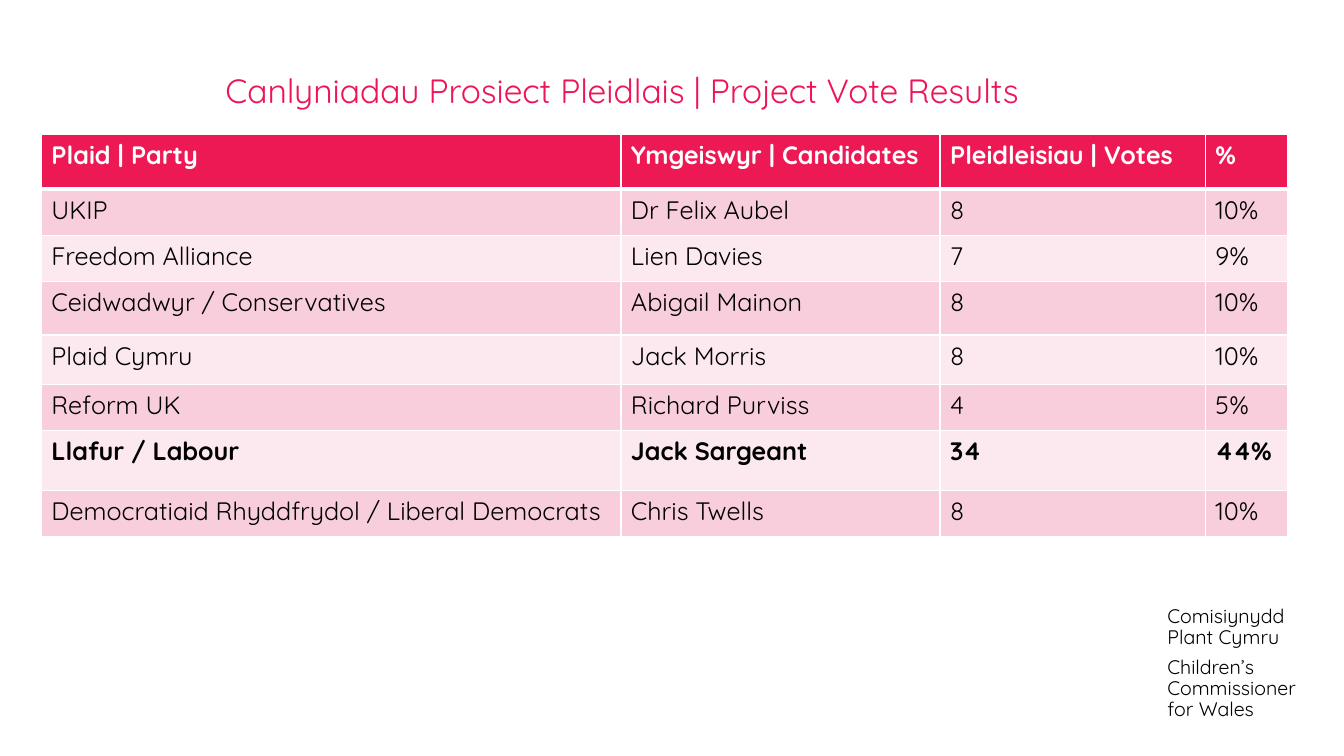
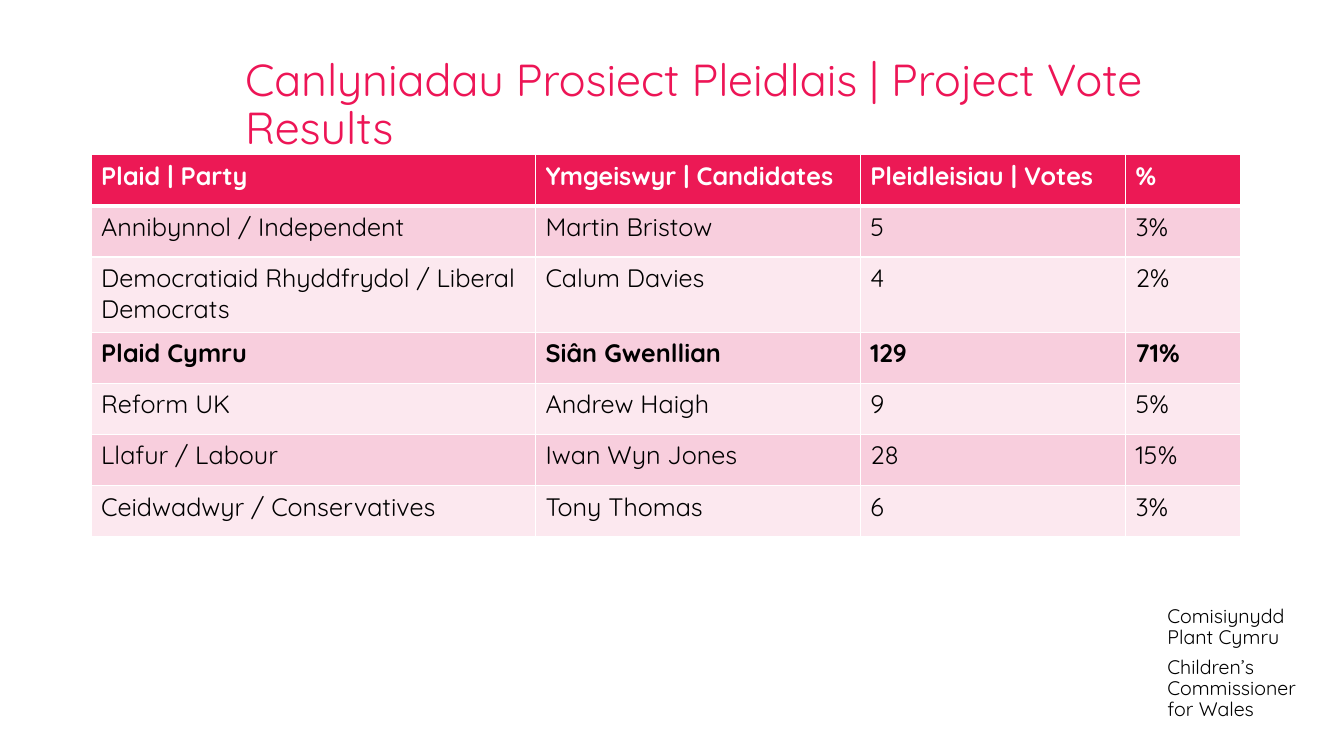
import copy

import pptx
import pptx.dml.color
import pptx.enum.text
import pptx.oxml
import pptx.oxml.ns
import pptx.util
from lxml import etree

Pt = pptx.util.Pt
FONT = "Quicksand"
PINK = "ED1556"
HEADER_FILL = "EC1955"
BAND_FILLS = ("F8CEDD", "FCE8EF")
WHITE = "FFFFFF"
BLACK = "000000"
TITLE = "Canlyniadau Prosiect Pleidlais | Project Vote Results"
HEADINGS = ("Plaid | Party", "Ymgeiswyr | Candidates", "Pleidleisiau | Votes", "%")
OFFICE_NAMES = ("Comisiynydd\vPlant Cymru", "Children’s\vCommissioner\vfor Wales")

RESULTS = [
    {
        "title": {"left": 161, "top": 53.3, "size": 24},
        "table": {"left": 29.5, "top": 96},
        "widths": (414, 228, 189.5, 59),
        "heights": (38.9, 33.1, 33.1, 38.2, 35.3, 33.1, 42.5, 33.1),
        "winner": "Llafur / Labour",
        "rows": [
            ("UKIP", "Dr Felix Aubel", "8", "10%"),
            ("Freedom Alliance", "Lien Davies", "7", "9%"),
            ("Ceidwadwyr / Conservatives", "Abigail Mainon", "8", "10%"),
            ("Plaid Cymru", "Jack Morris", "8", "10%"),
            ("Reform UK", "Richard Purviss", "4", "5%"),
            ("Llafur / Labour", "Jack Sargeant", "34", "44%"),
            ("Democratiaid Rhyddfrydol / Liberal Democrats", "Chris Twells", "8", "10%"),
        ],
    },
    {
        "title": {"left": 175, "top": 41, "size": 32},
        "table": {"left": 65, "top": 110.6},
        "widths": (317.5, 232, 189.5, 82.5),
        "heights": (36.5, 36.5, 54, 36.5, 36.5, 36.5, 36.5),
        "winner": "Plaid Cymru",
        "rows": [
            ("Annibynnol / Independent", "Martin Bristow", "5", "3%"),
            ("Democratiaid Rhyddfrydol / Liberal Democrats", "Calum Davies", "4", "2%"),
            ("Plaid Cymru", "Siân Gwenllian", "129", "71%"),
            ("Reform UK", "Andrew Haigh", "9", "5%"),
            ("Llafur / Labour", "Iwan Wyn Jones", "28", "15%"),
            ("Ceidwadwyr / Conservatives", "Tony Thomas", "6", "3%"),
        ],
    },
]


def rgb(value):
    return pptx.dml.color.RGBColor.from_string(value)


def set_all(target, values):
    for name, value in values.items():
        setattr(target, name, value)


def write(para, text, size, color, bold=False, **layout):
    para.text = text
    set_all(para, layout)
    for span in para.runs:
        set_all(span.font, {"name": FONT, "size": Pt(size), "bold": bold})
        span.font.color.rgb = rgb(color)
    properties = para.runs[0].font._element
    for line_break in para._p.findall(pptx.oxml.ns.qn("a:br")):
        line_break.append(copy.deepcopy(properties))


def prepare_frame(box, left, top, width, height, anchor):
    set_all(box, {"left": Pt(left), "top": Pt(top),
                  "width": Pt(width), "height": Pt(height)})
    set_all(box.text_frame, {
        "margin_left": 0, "margin_top": 0, "margin_right": 0, "margin_bottom": 0,
        "word_wrap": True, "vertical_anchor": anchor,
        "auto_size": pptx.enum.text.MSO_AUTO_SIZE.NONE,
    })
    return box.text_frame


def add_title(page, left, top, size):
    frame = prepare_frame(page.shapes.title, left, top, 677.5, 54.7,
                          pptx.enum.text.MSO_ANCHOR.TOP)
    write(frame.paragraphs[0], TITLE, size, PINK, line_spacing=0.9,
          alignment=pptx.enum.text.PP_ALIGN.LEFT)


def add_office_name(page):
    box = page.shapes.add_textbox(0, 0, 0, 0)
    frame = prepare_frame(box, 833.8, 432.7, 99.4, 82.8,
                          pptx.enum.text.MSO_ANCHOR.MIDDLE)
    frame.add_paragraph()
    for para, text, gap in zip(frame.paragraphs, OFFICE_NAMES, (6, 0)):
        write(para, text, 14, BLACK, line_spacing=0.9, space_after=Pt(gap))


def add_borders(cell, bottom):
    properties = cell._tc.get_or_add_tcPr()
    for side, width in (("L", 1), ("R", 1), ("T", 1), ("B", bottom)):
        line = etree.SubElement(properties, pptx.oxml.ns.qn("a:ln" + side),
                                w=str(Pt(width)))
        fill = etree.SubElement(line, pptx.oxml.ns.qn("a:solidFill"))
        etree.SubElement(fill, pptx.oxml.ns.qn("a:srgbClr"), val=WHITE)


def fill_cell(cell, text, fill, color, bold, bottom):
    add_borders(cell, bottom)
    cell.fill.solid()
    cell.fill.fore_color.rgb = rgb(fill)
    write(cell.text_frame.paragraphs[0], text, 18, color, bold)


def add_results(page, result):
    widths, heights = result["widths"], result["heights"]
    table = page.shapes.add_table(
        len(heights), len(widths), Pt(result["table"]["left"]),
        Pt(result["table"]["top"]), Pt(sum(widths)), Pt(sum(heights))).table
    for column, width in zip(table.columns, widths):
        column.width = Pt(width)
    for row, height in zip(table.rows, heights):
        row.height = Pt(height)
    for column, heading in enumerate(HEADINGS):
        fill_cell(table.cell(0, column), heading, HEADER_FILL, WHITE, True, 3)
    for index, values in enumerate(result["rows"]):
        for column, text in enumerate(values):
            fill_cell(table.cell(index + 1, column), text, BAND_FILLS[index % 2],
                      BLACK, values[0] == result["winner"], 1)
    for column in range(len(HEADINGS)):
        top_line = table.cell(1, column)._tc.tcPr.find(pptx.oxml.ns.qn("a:lnT"))
        top_line.set("w", str(Pt(3)))


def main():
    deck = pptx.Presentation()
    set_all(deck, {"slide_width": Pt(960), "slide_height": Pt(540)})
    for result in RESULTS:
        page = deck.slides.add_slide(deck.slide_layouts[5])
        add_office_name(page)
        add_title(page, **result["title"])
        add_results(page, result)
    deck.save("out.pptx")


if __name__ == "__main__":
    main()
